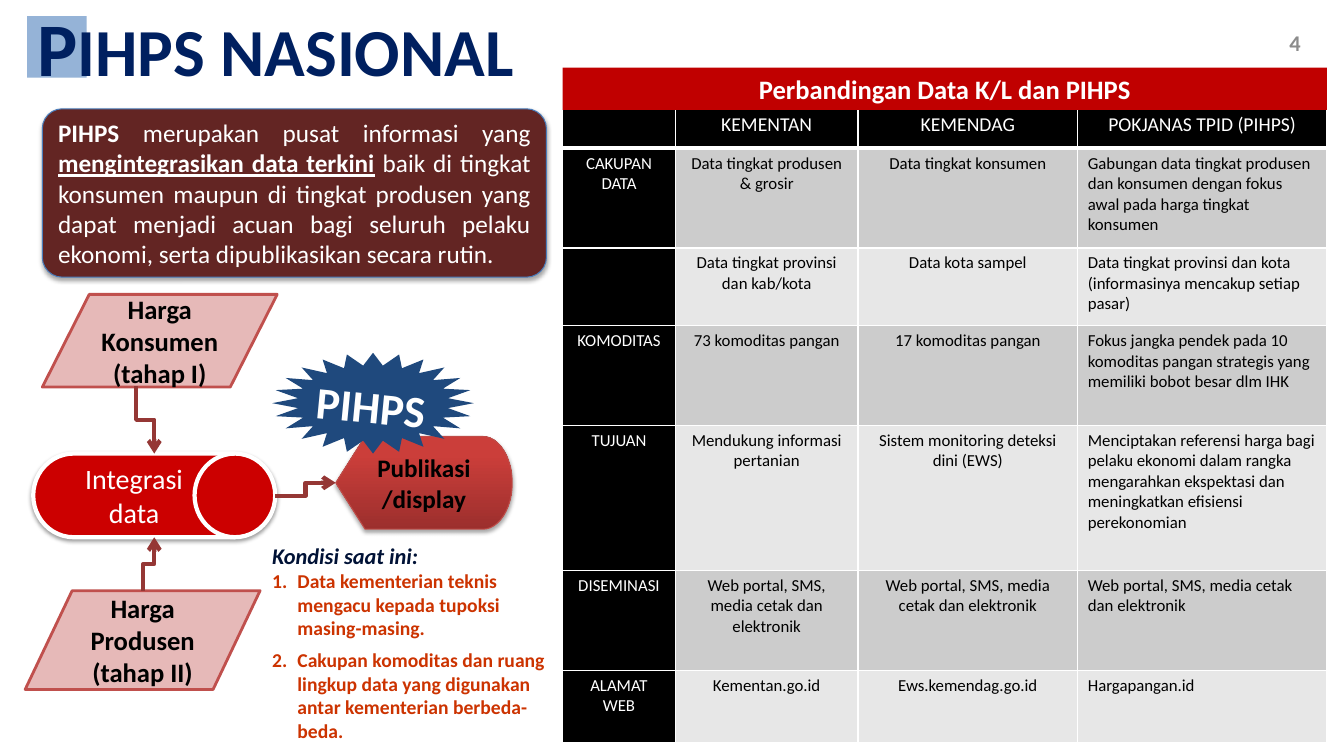
import pptx
import pptx.util
import pptx.dml.color
import pptx.enum.shapes
import pptx.enum.text
import pptx.oxml
import pptx.oxml.ns
import lxml.etree

Inches = pptx.util.Inches
Pt = pptx.util.Pt
SHAPE = pptx.enum.shapes.MSO_SHAPE
ALIGN = pptx.enum.text.PP_ALIGN
ANCHOR = pptx.enum.text.MSO_ANCHOR
qn = pptx.oxml.ns.qn

COLUMN_WIDTHS = [1.12, 1.81, 2.18, 2.47]
ROW_HEIGHTS = [0.34, 0.99, 0.77, 0.99, 1.44, 0.99, 0.72]
COMPARISON = [
    ["", "KEMENTAN", "KEMENDAG", "POKJANAS TPID (PIHPS)"],
    ["CAKUPAN DATA", "Data tingkat produsen & grosir", "Data tingkat konsumen",
     "Gabungan data tingkat produsen dan konsumen dengan fokus awal pada harga tingkat konsumen"],
    ["", "Data tingkat provinsi dan kab/kota", "Data kota sampel",
     "Data tingkat provinsi dan kota (informasinya mencakup setiap pasar)"],
    ["KOMODITAS", "73 komoditas pangan", "17 komoditas pangan",
     "Fokus jangka pendek pada 10 komoditas pangan strategis yang memiliki bobot besar dlm IHK"],
    ["TUJUAN", "Mendukung informasi pertanian", "Sistem monitoring deteksi dini (EWS)",
     "Menciptakan referensi harga bagi pelaku ekonomi dalam rangka mengarahkan ekspektasi "
     "dan meningkatkan efisiensi perekonomian"],
    ["DISEMINASI"] + ["Web portal, SMS, media cetak dan elektronik"] * 3,
    ["ALAMAT\nWEB", "Kementan.go.id", "Ews.kemendag.go.id", "Hargapangan.id"],
]


def rgb(color):
    return pptx.dml.color.RGBColor.from_string(color)


def add_element(parent, tag, **attributes):
    return lxml.etree.SubElement(parent, qn(tag), **attributes)


def write_text(frame, paragraphs, align=ALIGN.CENTER, anchor=ANCHOR.TOP, **base):
    frame.word_wrap = True
    frame.vertical_anchor = anchor
    for index, runs in enumerate(paragraphs):
        paragraph = frame.paragraphs[0] if index == 0 else frame.add_paragraph()
        paragraph.alignment = align
        for text, changes in [(runs, {})] if isinstance(runs, str) else runs:
            style = {"size": 18, "color": "000000", "bold": False, **base, **changes}
            run = paragraph.add_run()
            run.text = text
            run.font.name = "Calibri"
            run.font.size = Pt(style["size"])
            run.font.bold = style["bold"]
            run.font.italic = style.get("italic")
            run.font.underline = style.get("underline")
            run.font.color.rgb = rgb(style["color"])


def add_shadow(shape, opacity, blur, distance):
    effects = shape.element.spPr.find(qn("a:effectLst"))
    shadow = add_element(effects, "a:outerShdw", blurRad=str(Pt(blur)), dist=str(Pt(distance)),
                         dir="5400000", rotWithShape="0")
    color = add_element(shadow, "a:srgbClr", val="000000")
    add_element(color, "a:alpha", val=str(opacity * 1000))


def add_box(slide, kind, left, top, width, height, fill=None, line=None, line_width=0.75):
    shape = slide.shapes.add_shape(kind, Inches(left), Inches(top), Inches(width), Inches(height))
    shape.shadow.inherit = False
    if fill:
        shape.fill.solid()
        shape.fill.fore_color.rgb = rgb(fill)
    else:
        shape.fill.background()
    if line:
        shape.line.color.rgb = rgb(line)
        shape.line.width = Pt(line_width)
    else:
        shape.line.fill.background()
    return shape


def add_text_box(slide, left, top, width, height, text, **style):
    box = slide.shapes.add_textbox(Inches(left), Inches(top), Inches(width), Inches(height))
    write_text(box.text_frame, [text], **style)
    return box


def add_elbow(slide, begin, end, vertical=False):
    (x1, y1), (x2, y2) = begin, end
    rotation = 0
    if vertical:
        middle_x, middle_y = (x1 + x2) / 2, (y1 + y2) / 2
        direction = 1 if y2 > y1 else -1
        half_length, half_rise = abs(y2 - y1) / 2, direction * (x1 - x2) / 2
        x1, x2 = middle_x - half_length, middle_x + half_length
        y1, y2 = middle_y - half_rise, middle_y + half_rise
        rotation = 180 - 90 * direction
    connector = slide.shapes.add_connector(
        pptx.enum.shapes.MSO_CONNECTOR.ELBOW, Inches(x1), Inches(y1), Inches(x2), Inches(y2))
    connector.line.color.rgb = rgb("953735")
    connector.line.width = Pt(3)
    properties = connector.element.spPr
    if rotation:
        properties.find(qn("a:xfrm")).set("rot", str(rotation * 60000))
    add_element(properties.find(qn("a:ln")), "a:tailEnd", type="arrow")
    add_element(properties, "a:effectLst")


def add_price_source(slide, left, top, height, text):
    source = add_box(slide, SHAPE.FLOWCHART_DATA, left, top, 2.33, height, "E6B9B8", "C0504D", 2)
    write_text(source.text_frame, [text], anchor=ANCHOR.MIDDLE, size=19, bold=True)


def add_conditions(slide):
    panel = add_box(slide, SHAPE.ROUNDED_RECTANGLE, 2.58, 5.33, 3, 2.08)
    panel.adjustments[0] = 0.036
    write_text(panel.text_frame, [
        [("Kondisi saat ini:", {"size": 16, "color": "001236", "italic": True})],
        "Data kementerian teknis mengacu kepada tupoksi masing-masing.",
        "Cakupan komoditas dan ruang lingkup data yang digunakan antar kementerian berbeda-beda.",
    ], align=ALIGN.LEFT, anchor=ANCHOR.MIDDLE, size=14, color="CC3300", bold=True)
    for index, paragraph in enumerate(panel.text_frame.paragraphs):
        if index:
            paragraph.space_after = Pt(6)
        properties = paragraph._p.get_or_add_pPr()
        properties.set("marL", str(Inches(0.25)))
        properties.set("indent", str(-Inches(0.25)))
        if index:
            add_element(properties, "a:buFont", typeface="+mj-lt")
            add_element(properties, "a:buAutoNum", type="arabicPeriod")


def format_cell(cell, fill, bottom_width):
    properties = cell._tc.get_or_add_tcPr()
    for tag, width in [("a:lnL", 1), ("a:lnR", 1), ("a:lnT", 1), ("a:lnB", bottom_width)]:
        border = add_element(properties, tag, w=str(Pt(width)))
        add_element(add_element(border, "a:solidFill"), "a:srgbClr", val="FFFFFF")
    cell.fill.solid()
    cell.fill.fore_color.rgb = rgb(fill)


def add_comparison(slide):
    table = slide.shapes.add_table(len(ROW_HEIGHTS), len(COLUMN_WIDTHS), Inches(5.58), Inches(1.07),
                                   Inches(7.58), Inches(6.25)).table
    for column, width in zip(table.columns, COLUMN_WIDTHS):
        column.width = Inches(width)
    for row_index, texts in enumerate(COMPARISON):
        table.rows[row_index].height = Inches(ROW_HEIGHTS[row_index])
        for column_index, text in enumerate(texts):
            cell = table.cell(row_index, column_index)
            header = row_index == 0
            dark = header or column_index == 0
            band = "CCCCCC" if row_index % 2 else "E7E7E7"
            format_cell(cell, "000000" if dark else band, 3 if header else 1)
            if text:
                left_aligned = column_index == 3 and not header
                write_text(cell.text_frame, text.split("\n"), size=14 if header else 12,
                           color="FFFFFF" if dark else "000000",
                           align=ALIGN.LEFT if left_aligned else ALIGN.CENTER)


def add_title(slide):
    title = slide.shapes.title
    title.left, title.top, title.width, title.height = map(Inches, (0.23, 0.15, 12.5, 0.62))
    write_text(title.text_frame, [[("P", {"size": 54}), ("IHPS NASIONAL", {})]],
               align=ALIGN.LEFT, anchor=ANCHOR.MIDDLE, size=48, color="002060", bold=True)
    title.text_frame.auto_size = pptx.enum.text.MSO_AUTO_SIZE.NONE
    paragraph = title.text_frame.paragraphs[0]
    paragraph.space_before = paragraph.space_after = Pt(6)
    paragraph._p.get_or_add_pPr().set("marL", str(Inches(0.04)))
    slide.shapes._spTree.append(title.element)


def main():
    presentation = pptx.Presentation()
    presentation.slide_width, presentation.slide_height = Inches(13.33), Inches(7.5)
    slide = presentation.slides.add_slide(presentation.slide_layouts[5])

    add_text_box(slide, 9.97, 0.22, 3.03, 0.4, "4", align=ALIGN.RIGHT, anchor=ANCHOR.MIDDLE,
                 size=16, color="8C8C8C", bold=True)

    definition = add_box(slide, SHAPE.ROUNDED_RECTANGLE, 0.42, 1.08, 5, 1.67, "632523", "4B7EBC")
    definition.adjustments[0] = 0.118
    add_shadow(definition, 35, 3.1, 1.8)
    write_text(definition.text_frame, [[
        ("PIHPS ", {"bold": True}),
        ("merupakan pusat informasi yang ", {}),
        ("mengintegrasikan data terkini", {"bold": True, "underline": True}),
        (" baik di tingkat konsumen maupun di tingkat produsen yang dapat menjadi acuan "
         "bagi seluruh pelaku ekonomi, serta dipublikasikan secara rutin.", {}),
    ]], align=ALIGN.JUSTIFY, anchor=ANCHOR.MIDDLE, color="FFFFFF")

    drum = add_box(slide, SHAPE.FLOWCHART_DIRECT_ACCESS_STORAGE, 0.33, 4.5, 2.4, 0.83,
                   "CC0000", "FFFFFF", 3)
    add_shadow(drum, 38, 3.1, 1.6)
    write_text(drum.text_frame, ["Integrasi data"], anchor=ANCHOR.MIDDLE, size=20, color="FFFFFF")

    display = add_box(slide, SHAPE.FLOWCHART_DISPLAY, 3.33, 4.33, 1.75, 0.92, line="BF4C48")
    display.fill.gradient()
    display.fill.gradient_angle = 90
    for stop, (color, position) in zip(display.fill.gradient_stops, [("9C2F2D", 0), ("CB3E3A", 0.8)]):
        stop.color.rgb = rgb(color)
        stop.position = position
    add_shadow(display, 35, 3.1, 1.8)
    write_text(display.text_frame, ["Publikasi/display"], anchor=ANCHOR.MIDDLE, bold=True)
    add_elbow(slide, (2.73, 4.92), (3.33, 4.79))

    add_conditions(slide)
    add_box(slide, SHAPE.STAR_24_POINT, 2.7, 3.5, 2, 1, "1F497D")
    star_label = add_text_box(slide, 2.97, 3.71, 1.42, 0.64, "PIHPS", size=32, color="FFFFFF", bold=True)
    star_label.rotation = 5.5

    add_comparison(slide)
    banner = add_box(slide, SHAPE.RECTANGLE, 5.58, 0.67, 7.58, 0.42, "C00000")
    write_text(banner.text_frame, ["Perbandingan Data K/L dan PIHPS"], size=19, color="FFFFFF", bold=True)

    add_price_source(slide, 0.25, 5.86, 0.98, "Harga Produsen (tahap II)")
    add_elbow(slide, (1.42, 5.86), (1.53, 5.33), vertical=True)
    add_box(slide, SHAPE.RECTANGLE, 0.27, 0.16, 0.59, 0.61, "95B3D7")
    add_price_source(slide, 0.42, 2.92, 0.92, "Harga Konsumen (tahap I)")
    add_elbow(slide, (1.35, 3.83), (1.53, 4.5), vertical=True)
    add_title(slide)
    presentation.save("out.pptx")


if __name__ == "__main__":
    main()
